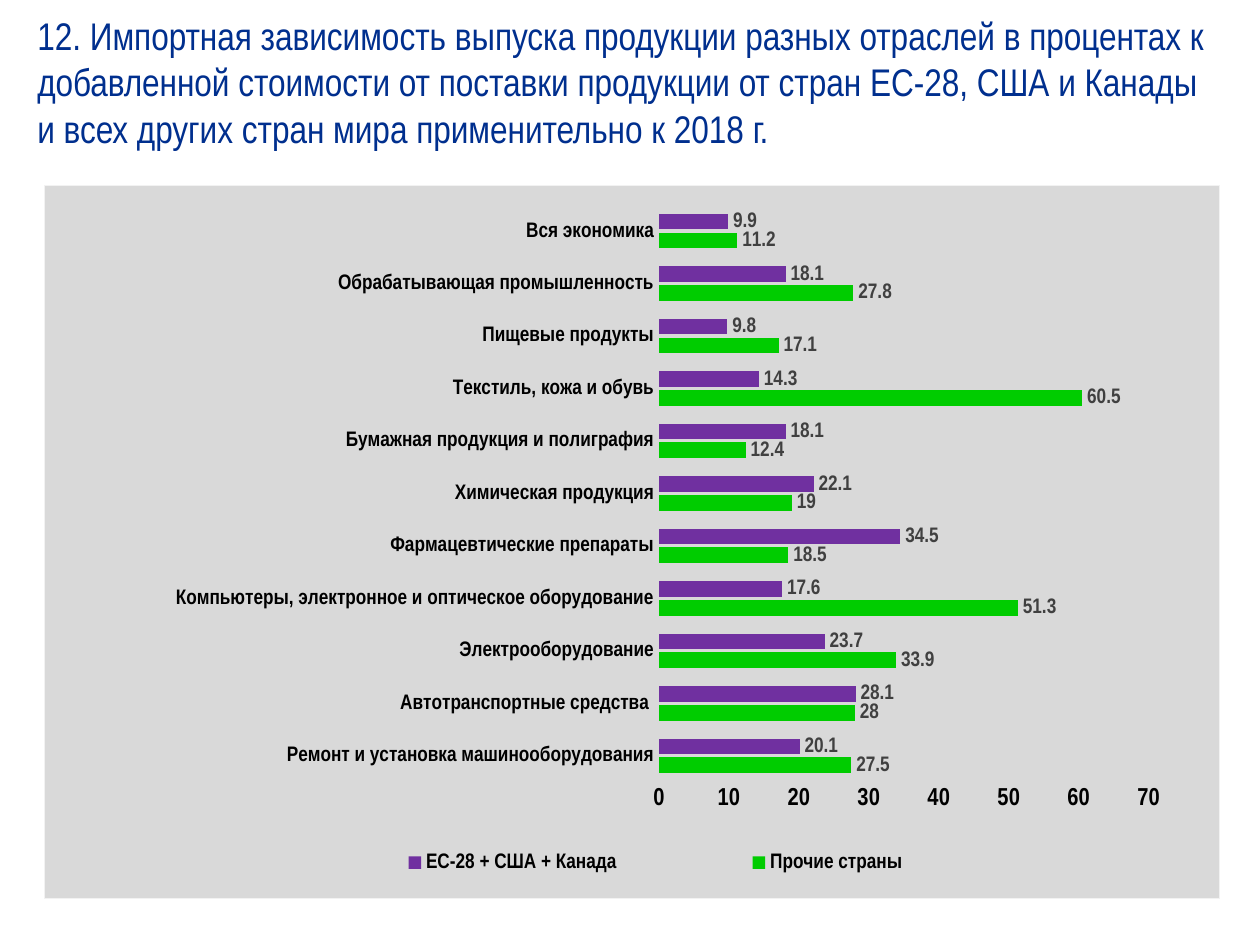
from dataclasses import dataclass

from lxml import etree
from pptx import Presentation
from pptx.chart.data import CategoryChartData
from pptx.dml.color import RGBColor
from pptx.enum.chart import (XL_CHART_TYPE, XL_LABEL_POSITION,
                             XL_LEGEND_POSITION, XL_TICK_MARK)
from pptx.oxml import parse_xml
from pptx.util import Emu, Pt

BAR = XL_CHART_TYPE.BAR_CLUSTERED
BOTTOM = XL_LEGEND_POSITION.BOTTOM
OUTER = XL_LABEL_POSITION.OUTSIDE_END
NO_TICK = XL_TICK_MARK.NONE
SCALE = 914400 / 126
FACE = "Arial Narrow"
C = "http://schemas.openxmlformats.org/drawingml/2006/chart"
A = "http://schemas.openxmlformats.org/drawingml/2006/main"

TITLE = ("12. Импортная зависимость выпуска продукции разных отраслей в "
         "процентах к добавленной стоимости от поставки продукции от стран "
         "ЕС-28, США и Канады и всех других стран мира применительно к 2018 г.")
FIELDS = (
    "Ремонт и установка машинооборудования",
    "Автотранспортные средства ",
    "Электрооборудование",
    "Компьютеры, электронное и оптическое оборудование",
    "Фармацевтические препараты",
    "Химическая продукция",
    "Бумажная продукция и полиграфия",
    "Текстиль, кожа и обувь",
    "Пищевые продукты",
    "Обрабатывающая промышленность",
    "Вся экономика",
)


@dataclass
class Series:
    name: str
    color: str
    values: tuple


@dataclass
class Box:
    left: int
    top: int
    width: int
    height: int

    def emu(self) -> list:
        return [px(n) for n in (self.left, self.top, self.width, self.height)]


GROUPS = (
    Series("Прочие страны", "00CC00",
           (27.5, 28, 33.9, 51.3, 18.5, 19, 12.4, 60.5, 17.1, 27.8, 11.2)),
    Series("ЕС-28 + США + Канада", "7030A0",
           (20.1, 28.1, 23.7, 17.6, 34.5, 22.1, 18.1, 14.3, 9.8, 18.1, 9.9)),
)
HEAD = Box(25, 6, 1211, 152)
FRAME = Box(44, 185, 1176, 714)


def px(n: int) -> Emu:
    return Emu(round(n * SCALE))


def rgb(code: str) -> RGBColor:
    return RGBColor.from_string(code)


def assign(target, values: dict) -> None:
    for key, value in values.items():
        setattr(target, key, value)


def style(font, size: int, color: str, bold: bool = True, name: str = FACE) -> None:
    assign(font, {"size": Pt(size), "bold": bold, "name": name})
    font.color.rgb = rgb(color)


def stroke(line, color: str, width: float) -> None:
    line.color.rgb = rgb(color)
    line.width = Pt(width)


def place(parent, index: int, x: float, y: float, w: float, h: float,
          inner: bool = False) -> None:
    for old in parent.findall(f"{{{C}}}layout"):
        parent.remove(old)
    layout = etree.Element(f"{{{C}}}layout")
    manual = etree.SubElement(layout, f"{{{C}}}manualLayout")
    items = [("layoutTarget", "inner")] if inner else []
    items += [("xMode", "edge"), ("yMode", "edge"),
              ("x", x), ("y", y), ("w", w), ("h", h)]
    for tag, value in items:
        etree.SubElement(manual, f"{{{C}}}{tag}", val=str(value))
    parent.insert(index, layout)


def panel(root, fill: str, edge: str, width: float) -> None:
    root.find(f"{{{C}}}chart").addnext(parse_xml(
        f'<c:spPr xmlns:c="{C}" xmlns:a="{A}">'
        f'<a:solidFill><a:srgbClr val="{fill}"/></a:solidFill>'
        f'<a:ln w="{Pt(width)}"><a:solidFill><a:srgbClr val="{edge}"/>'
        '</a:solidFill></a:ln></c:spPr>'))


def draw_head(slide, box: Box) -> None:
    frame = slide.shapes.add_textbox(*box.emu()).text_frame
    frame.word_wrap = True
    para = frame.paragraphs[0]
    para.space_before = Pt(6)
    run = para.add_run()
    run.text = TITLE
    style(run.font, 22, "002F8E", False)


def draw_axes(chart) -> None:
    ticks = {"major_tick_mark": NO_TICK, "minor_tick_mark": NO_TICK}
    cat, val = chart.category_axis, chart.value_axis
    assign(cat, ticks)
    assign(val, ticks | {"minimum_scale": 0, "maximum_scale": 70,
                         "major_unit": 10, "has_major_gridlines": True})
    style(cat.tick_labels.font, 12, "000000")
    style(val.tick_labels.font, 14, "000000")
    stroke(cat.format.line, "D9D9D9", 1)
    stroke(val.major_gridlines.format.line, "D9D9D9", 0.75)
    val.format.line.fill.background()


def draw_bars(plot) -> None:
    assign(plot, {"gap_width": 115, "overlap": -20, "vary_by_categories": False})
    for bar, group in zip(plot.series, GROUPS):
        bar.format.fill.solid()
        bar.format.fill.fore_color.rgb = rgb(group.color)
        bar.invert_if_negative = False
        labels = bar.data_labels
        assign(labels, {"show_value": True, "position": OUTER})
        style(labels.font, 12, "404040")


def draw_chart(slide, box: Box) -> None:
    data = CategoryChartData()
    data.categories = FIELDS
    for group in GROUPS:
        data.add_series(group.name, group.values)
    chart = slide.shapes.add_chart(BAR, *box.emu(), data).chart
    assign(chart, {"has_title": False, "has_legend": True})
    style(chart.font, 10, "000000", False, "Calibri")
    assign(chart.legend, {"position": BOTTOM, "include_in_layout": False})
    style(chart.legend.font, 12, "000000")
    draw_axes(chart)
    draw_bars(chart.plots[0])
    root = chart._chartSpace
    place(root.find(f".//{{{C}}}plotArea"), 0, 0.523, 0.027, 0.417, 0.81, True)
    place(root.find(f".//{{{C}}}legend"), 1, 0.2, 0.92, 0.64, 0.06)
    panel(root, "D9D9D9", "F2F2F2", 0.75)


def main() -> None:
    deck = Presentation()
    assign(deck, {"slide_width": px(1260), "slide_height": px(945)})
    slide = deck.slides.add_slide(deck.slide_layouts[6])
    draw_chart(slide, FRAME)
    draw_head(slide, HEAD)
    deck.save("out.pptx")


if __name__ == "__main__":
    main()
